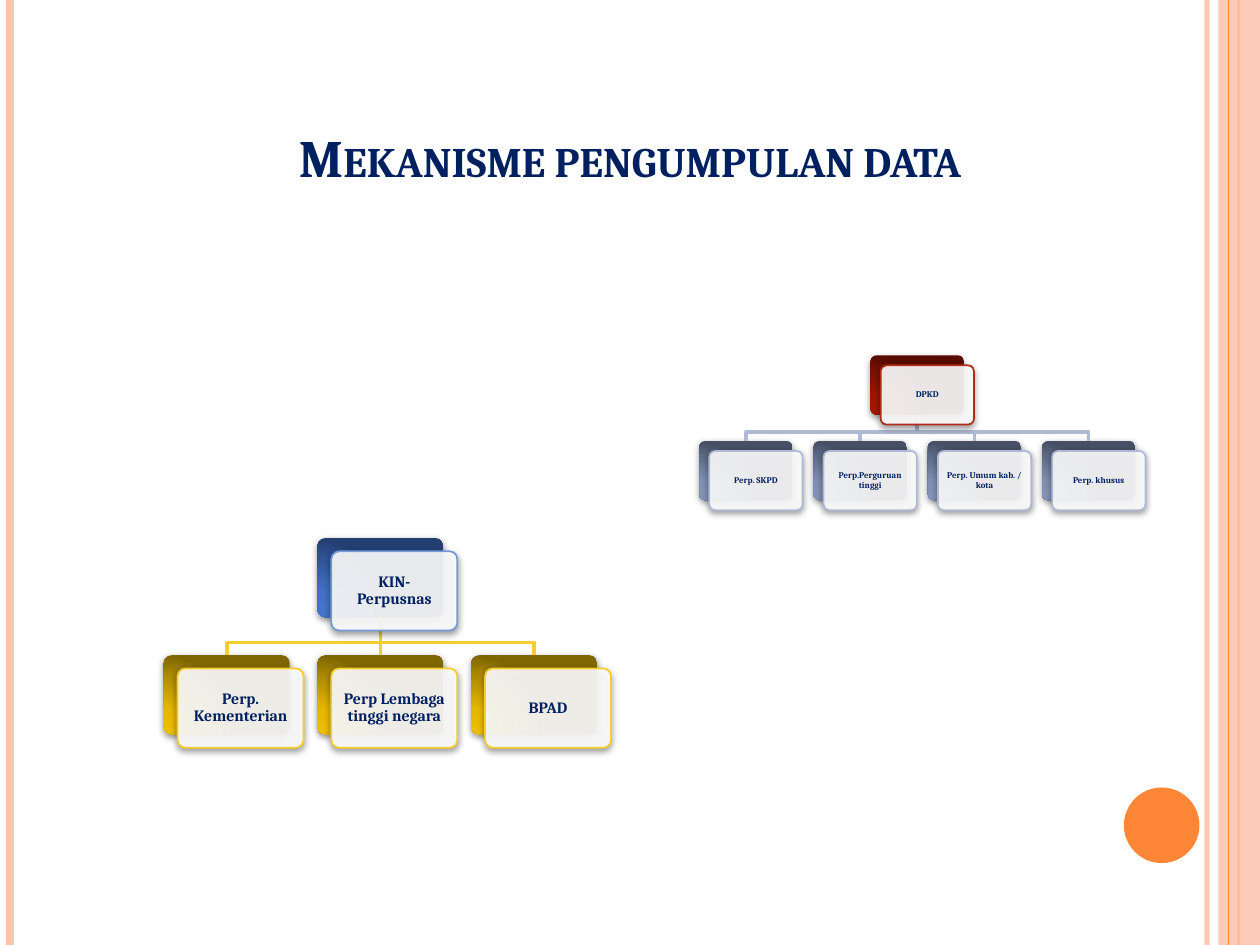
from lxml import etree
from pptx import Presentation
from pptx.dml.color import RGBColor
from pptx.enum.shapes import MSO_CONNECTOR, MSO_SHAPE
from pptx.enum.text import MSO_ANCHOR, PP_ALIGN
from pptx.oxml import parse_xml
from pptx.oxml.ns import nsdecls, qn
from pptx.util import Inches, Pt

RECTANGLE, ROUNDED, OVAL = MSO_SHAPE.RECTANGLE, MSO_SHAPE.ROUNDED_RECTANGLE, MSO_SHAPE.OVAL
STRAIGHT = MSO_CONNECTOR.STRAIGHT
CENTER = PP_ALIGN.CENTER
MIDDLE, BOTTOM = MSO_ANCHOR.MIDDLE, MSO_ANCHOR.BOTTOM
SIDE_TOP, SIDE_BOTTOM = 0, 2

FONT = "Cambria"
COLORS = {
    "peach": "FEC3AE", "orange": "FE8637", "navy": "002060", "white": "FFFFFF",
    "blue": "7598D9", "yellow": "F5CD2D", "red": "B32C16", "slate": "AEBAD5",
}
GRADIENT_STOPS = (0, 30, 75, 100)
GRADIENTS = {
    "blue": ("4574CC", "4370C5", "2F5397", "233E70"),
    "yellow": ("EDBE00", "E5B700", "AC8900", "7F6600"),
    "red": ("A41700", "9F1600", "771100", "580C00"),
    "slate": ("8494B9", "7F8FB2", "5E6B87", "464F64"),
}
# Each chart: the root box, a row of children below it, and their measures in inches
CHARTS = [
    {"root": "KIN-Perpusnas", "root_color": "blue", "root_at": (2.52, 4.27),
     "children": ["Perp. Kementerian", "Perp Lembaga tinggi negara", "BPAD"],
     "child_color": "yellow", "row_at": (1.3, 5.2), "pitch": 1.22,
     "box": (1, 0.63), "offset": (0.11, 0.105), "size": 9, "inset": 0.06},
    {"root": "DPKD", "root_color": "red", "root_at": (6.91, 2.82),
     "children": ["Perp. SKPD", "Perp.Perguruan tinggi",
                  "Perp. Umum kab. / kota", "Perp. khusus"],
     "child_color": "slate", "row_at": (5.55, 3.5), "pitch": 0.907,
     "box": (0.74, 0.47), "offset": (0.08, 0.08), "size": 5, "inset": 0.035},
]


def rgb(name):
    return RGBColor.from_string(COLORS[name])


def set_alpha(fill_parent, percent):
    color = fill_parent.find(qn("a:solidFill"))[0]
    etree.SubElement(color, qn("a:alpha")).set("val", str(percent * 1000))


def add_shadow(shape):
    properties = shape._element.spPr
    for empty in properties.findall(qn("a:effectLst")):
        properties.remove(empty)
    properties.append(parse_xml(
        f'<a:effectLst {nsdecls("a")}><a:outerShdw blurRad="{Pt(4)}" dist="{Pt(1.6)}" '
        'dir="5400000" rotWithShape="0"><a:srgbClr val="000000"><a:alpha val="42000"/>'
        '</a:srgbClr></a:outerShdw></a:effectLst>'))


def add_box(slide, kind, position, size, fill=None, alpha=None, line=None):
    shape = slide.shapes.add_shape(kind, *map(Inches, (*position, *size)))
    shape.shadow.inherit = False
    if kind == ROUNDED:
        shape.adjustments[0] = 0.1
    if fill:
        shape.fill.solid()
        shape.fill.fore_color.rgb = rgb(fill)
    if alpha:
        set_alpha(shape._element.spPr, alpha)
    if line:
        shape.line.color.rgb = rgb(line)
        shape.line.width = Pt(1)
    else:
        shape.line.fill.background()
    return shape


def add_line(slide, start, end, color, width, alpha=None):
    connector = slide.shapes.add_connector(STRAIGHT, *map(Inches, (*start, *end)))
    connector.line.color.rgb = rgb(color)
    connector.line.width = Pt(width)
    if alpha:
        set_alpha(connector.line._ln, alpha)
    etree.SubElement(connector._element.spPr, qn("a:effectLst"))
    return connector


def write_text(shape, text, size, anchor=MIDDLE, insets=(0.1, 0.05),
               spacing=None, small_caps=False):
    frame = shape.text_frame
    frame.word_wrap = True
    frame.vertical_anchor = anchor
    frame.margin_left = frame.margin_right = Inches(insets[0])
    frame.margin_top = frame.margin_bottom = Inches(insets[1])
    paragraph = frame.paragraphs[0]
    paragraph.alignment = CENTER
    paragraph.line_spacing = spacing
    run = paragraph.add_run()
    run.text = text
    run.font.name = FONT
    run.font.size = Pt(size)
    run.font.bold = True
    run.font.color.rgb = rgb("navy")
    if small_caps:
        run._r.get_or_add_rPr().set("cap", "small")


def add_rear_box(slide, position, size, color):
    shape = add_box(slide, ROUNDED, position, size)
    stops = "".join(
        f'<a:gs pos="{stop * 1000}"><a:srgbClr val="{value}"/></a:gs>'
        for stop, value in zip(GRADIENT_STOPS, GRADIENTS[color]))
    gradient = parse_xml(
        f'<a:gradFill {nsdecls("a")} rotWithShape="1"><a:gsLst>{stops}</a:gsLst>'
        '<a:path path="circle"><a:fillToRect l="5000" t="100000" r="120000" b="10000"/>'
        '</a:path></a:gradFill>')
    shape._element.spPr.find(qn("a:prstGeom")).addnext(gradient)
    add_shadow(shape)
    return shape


def add_front_card(slide, position, chart, text, color):
    card_position = [p + o for p, o in zip(position, chart["offset"])]
    card = add_box(slide, ROUNDED, card_position, chart["box"], "white", 90, color)
    add_shadow(card)
    write_text(card, text, chart["size"], insets=(chart["inset"],) * 2, spacing=0.9)


def add_link(slide, root, child, color):
    start_x, start_y = root.left + root.width // 2, root.top + root.height
    end_x, end_y = child.left + child.width // 2, child.top
    if start_x - end_x == 0:
        link = add_line(slide, (0, 0), (1, 1), color, 2)
        link.begin_connect(root, SIDE_BOTTOM)
        link.end_connect(child, SIDE_TOP)
        return
    bend_y = start_y + (end_y - start_y) * 2 // 3
    builder = slide.shapes.build_freeform(start_x, start_y)
    builder.add_line_segments(
        [(start_x, bend_y), (end_x, bend_y), (end_x, end_y)], close=False)
    link = builder.convert_to_shape()
    link.shadow.inherit = False
    link.fill.background()
    link.line.color.rgb = rgb(color)
    link.line.width = Pt(2)


def add_chart_tree(slide, chart):
    left, top = chart["row_at"]
    places = [(left + i * chart["pitch"], top) for i in range(len(chart["children"]))]
    color = chart["child_color"]

    # Rear boxes, then links, then the cards that carry the text
    root = add_rear_box(slide, chart["root_at"], chart["box"], chart["root_color"])
    children = [add_rear_box(slide, place, chart["box"], color) for place in places]
    for child in children:
        add_link(slide, root, child, color)
    add_front_card(slide, chart["root_at"], chart, chart["root"], chart["root_color"])
    for place, text in zip(places, chart["children"]):
        add_front_card(slide, place, chart, text, color)


def add_decoration(slide):
    def add_stripe(x, color, width, alpha=None):
        add_line(slide, (x, 0), (x, 7.5), color, width, alpha)

    add_stripe(9.58, "peach", 3, 93)
    add_stripe(0.08, "peach", 4.5)
    add_stripe(9.83, "orange", 1.5)
    add_box(slide, RECTANGLE, (9.67, 0), (0.33, 7.5), "peach", 87)
    add_stripe(9.75, "orange", 0.75)
    add_box(slide, OVAL, (8.92, 6.25), (0.6, 0.6), "orange")


def main():
    presentation = Presentation()
    presentation.slide_width, presentation.slide_height = Inches(10), Inches(7.5)
    slide = presentation.slides.add_slide(presentation.slide_layouts[6])

    # Side stripes and circle
    add_decoration(slide)

    # Title
    title = slide.shapes.add_textbox(*map(Inches, (1.81, 0.29, 6.38, 1.25)))
    write_text(title, "Mekanisme pengumpulan data", 30, BOTTOM, small_caps=True)

    # Organisation charts
    for chart in CHARTS:
        add_chart_tree(slide, chart)

    presentation.save("out.pptx")


if __name__ == "__main__":
    main()
